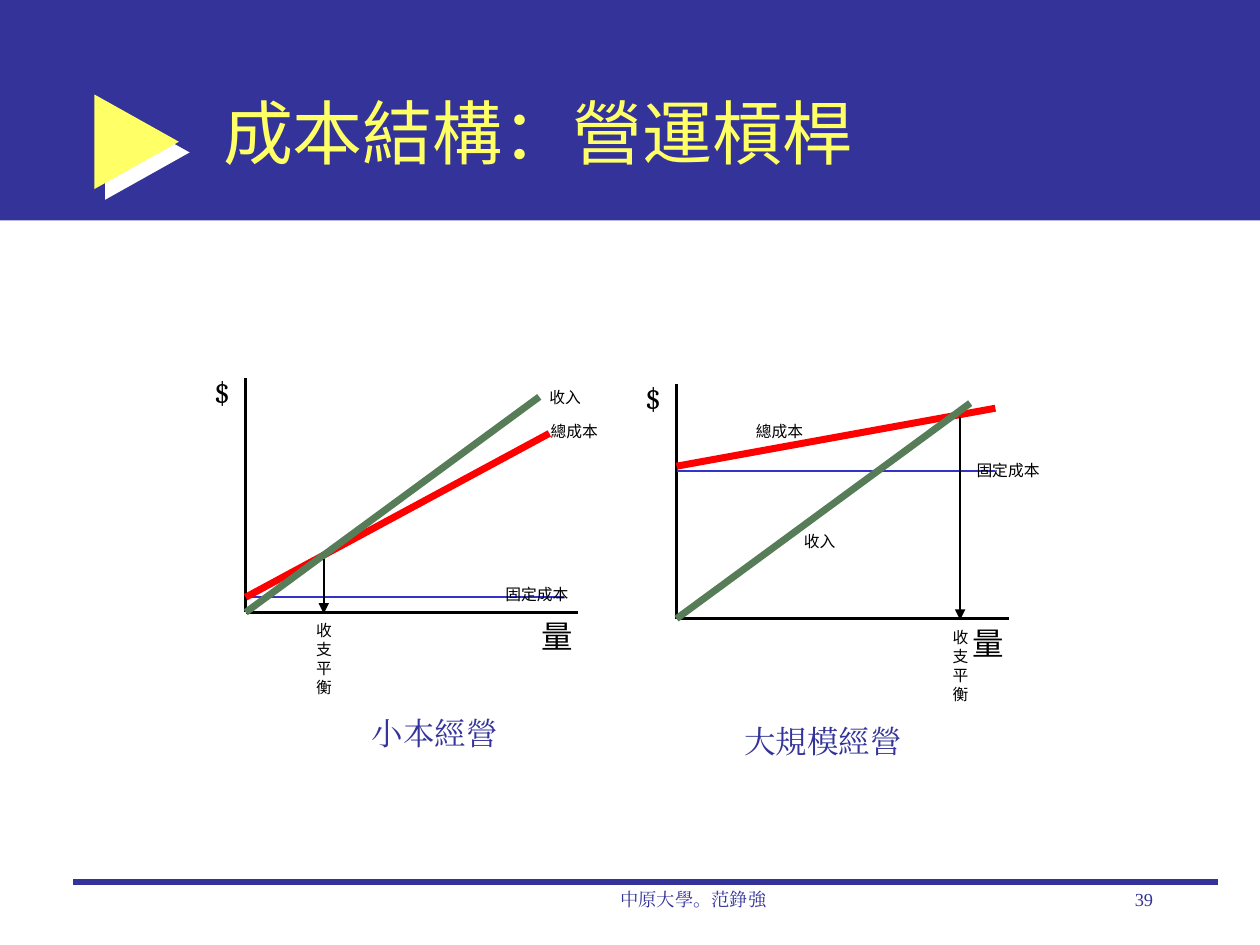
from lxml import etree
from pptx import Presentation
from pptx.dml.color import RGBColor
from pptx.enum.shapes import MSO_CONNECTOR, MSO_SHAPE
from pptx.enum.text import MSO_ANCHOR, MSO_AUTO_SIZE, PP_ALIGN
from pptx.oxml.ns import qn
from pptx.util import Inches, Pt

RECTANGLE, RIGHT_ARROW = MSO_SHAPE.RECTANGLE, MSO_SHAPE.RIGHT_ARROW
STRAIGHT = MSO_CONNECTOR.STRAIGHT
LEFT, CENTER, RIGHT = PP_ALIGN.LEFT, PP_ALIGN.CENTER, PP_ALIGN.RIGHT
MIDDLE = MSO_ANCHOR.MIDDLE
NO_FIT, GROW = MSO_AUTO_SIZE.NONE, MSO_AUTO_SIZE.SHAPE_TO_FIT_TEXT

# The slide is a grid of 100 columns by 75 rows with square cells
COLUMNS, ROWS, CELL = 100, 75, 0.1

NAVY, YELLOW, WHITE, BLACK = "333399", "FFFF66", "FFFFFF", "000000"
BLUE, RED, GREEN = "3333CC", "FF0000", "577D58"
SERIF, SANS, SYMBOL, TITLE_FONT = (
    "Times New Roman", "Roboto", "Cambria", "Noto Sans CJK SC")
TIGHT, NORMAL = (0.7, 0.4), (1, 0.5)

# Chart positions are offsets in cells from the chart's origin
SMALL = {
    "origin": (19.5, 48.6), "fixed": -1.2,
    "cost": ((0, -1.2), (24.1, -14.2)), "break_even": (6.2, -4.2),
    "labels": [("固定成本", 19.9, -2.6, 6.5), ("總成本", 23.5, -15.5, 5.3),
               ("收入", 23.4, -18.2, 4)],
    "caption": ("小本經營", 9, 7.6, 12.1),
}
LARGE = {
    "origin": (53.7, 49.1), "fixed": -11.7,
    "cost": ((0, -12.1), (25.3, -16.7)), "break_even": (22.5, -16),
    "labels": [("固定成本", 23.1, -12.9, 6.5), ("總成本", 5.6, -16, 5.3),
               ("收入", 9.4, -7.3, 4)],
    "caption": ("大規模經營", 4.4, 7.7, 14.6),
}


def cells(*values):
    return [Inches(value * CELL) for value in values]


def color(hex_string):
    return RGBColor.from_string(hex_string)


def format_text(text_frame, size, font_name, hex_color, align=LEFT):
    paragraph = text_frame.paragraphs[0]
    paragraph.alignment = align
    for run in paragraph.runs:
        run.font.size = Pt(size)
        run.font.color.rgb = color(hex_color)
        run.font.name = font_name
        east_asian = etree.SubElement(run.font._element, qn("a:ea"))
        east_asian.set("typeface", font_name)


def add_text(shapes, text, box, size, font_name, hex_color, align=LEFT,
             insets=NORMAL, wrap=False, fit=GROW):
    text_frame = shapes.add_textbox(*cells(*box)).text_frame
    text_frame.text = text
    text_frame.word_wrap = wrap
    text_frame.auto_size = fit
    side, edge = cells(*insets)
    text_frame.margin_left = text_frame.margin_right = side
    text_frame.margin_top = text_frame.margin_bottom = edge
    format_text(text_frame, size, font_name, hex_color, align)


def add_line(shapes, start, end, hex_color, width, arrow=False):
    connector = shapes.add_connector(STRAIGHT, *cells(*start, *end))
    connector.line.color.rgb = color(hex_color)
    connector.line.width = Pt(width)
    properties = connector._element.spPr
    if arrow:
        tail = etree.SubElement(properties.find(qn("a:ln")), qn("a:tailEnd"))
        tail.set("type", "triangle")
    etree.SubElement(properties, qn("a:effectLst"))


def add_filled(shapes, preset, box, hex_color):
    shape = shapes.add_shape(preset, *cells(*box))
    shape.shadow.inherit = False
    shape.fill.solid()
    shape.fill.fore_color.rgb = color(hex_color)
    shape.line.fill.background()
    return shape


def add_header(slide, title):
    add_filled(slide.shapes, RECTANGLE, (0, 0, COLUMNS, 17.5), NAVY)
    # Triangle marker over its white offset
    for offset, hex_color in ((0.85, WHITE), (0, YELLOW)):
        box = (7.5 + offset, 7.5 + offset, 6.7, 7.5)
        marker = add_filled(slide.shapes, RIGHT_ARROW, box, hex_color)
        marker.adjustments[0], marker.adjustments[1] = 0.38, 1

    placeholder = slide.shapes.title
    (placeholder.left, placeholder.top,
     placeholder.width, placeholder.height) = cells(16.7, 4.2, 75.8, 12.5)
    text_frame = placeholder.text_frame
    text_frame.text = title
    text_frame.vertical_anchor = MIDDLE
    text_frame.auto_size = NO_FIT
    format_text(text_frame, 40, TITLE_FONT, YELLOW)
    # Bring the title in front of the band
    slide.shapes._spTree.append(placeholder._element)


def add_footer(slide, author, number):
    add_line(slide.shapes, (5.8, 70), (96.7, 70), NAVY, 3)
    for text, left, width, align in ((author, 39.2, 31.7, CENTER),
                                     (number, 71.7, 20.8, RIGHT)):
        add_text(slide.shapes, text, (left, 70, width, 5), 10.5, SERIF, NAVY,
                 align, wrap=True, fit=NO_FIT)


def add_cost_chart(slide, chart):
    shapes = slide.shapes.add_group_shape().shapes

    def at(column, row):
        return chart["origin"][0] + column, chart["origin"][1] + row

    # Axes, then fixed cost, total cost and revenue
    origin = at(0, 0)
    add_line(shapes, at(0, -18.6), origin, BLACK, 2)
    add_line(shapes, origin, at(26.4, 0), BLACK, 2)
    add_line(shapes, at(0, chart["fixed"]), at(25.3, chart["fixed"]), BLUE, 1)
    cost_start, cost_end = chart["cost"]
    add_line(shapes, at(*cost_start), at(*cost_end), RED, 4)
    add_line(shapes, origin, at(23.3, -17.1), GREEN, 4)

    # Axis names
    add_text(shapes, "量", (*at(22.8, 0), 4, 3.8), 18, SANS, BLACK,
             insets=TIGHT)
    add_text(shapes, "$", (*at(-3.2, -19.4), 2.8, 3.8), 18, SYMBOL, BLACK,
             insets=TIGHT)

    # Break-even arrow and its stacked label
    column, row = chart["break_even"]
    add_line(shapes, at(column, row), at(column, 0.1), BLACK, 1, arrow=True)
    add_text(shapes, "收支平衡", (*at(column - 1.3, 0.3), 3, 6.8), 9, SANS,
             BLACK, insets=TIGHT, wrap=True)

    # Line labels and caption
    for text, column, row, width in chart["labels"]:
        add_text(shapes, text, (*at(column, row), width, 2.3), 9, SANS, BLACK,
                 insets=TIGHT)
    text, column, row, width = chart["caption"]
    add_text(shapes, text, (*at(column, row), width, 4), 18, SERIF, NAVY)


def main():
    presentation = Presentation()
    presentation.slide_width, presentation.slide_height = cells(COLUMNS, ROWS)
    title_only = presentation.slide_layouts[5]
    slide = presentation.slides.add_slide(title_only)
    add_header(slide, "成本結構：營運槓桿")
    add_footer(slide, "中原大學。范錚強", "39")
    for chart in (SMALL, LARGE):
        add_cost_chart(slide, chart)
    presentation.save("out.pptx")


if __name__ == "__main__":
    main()
